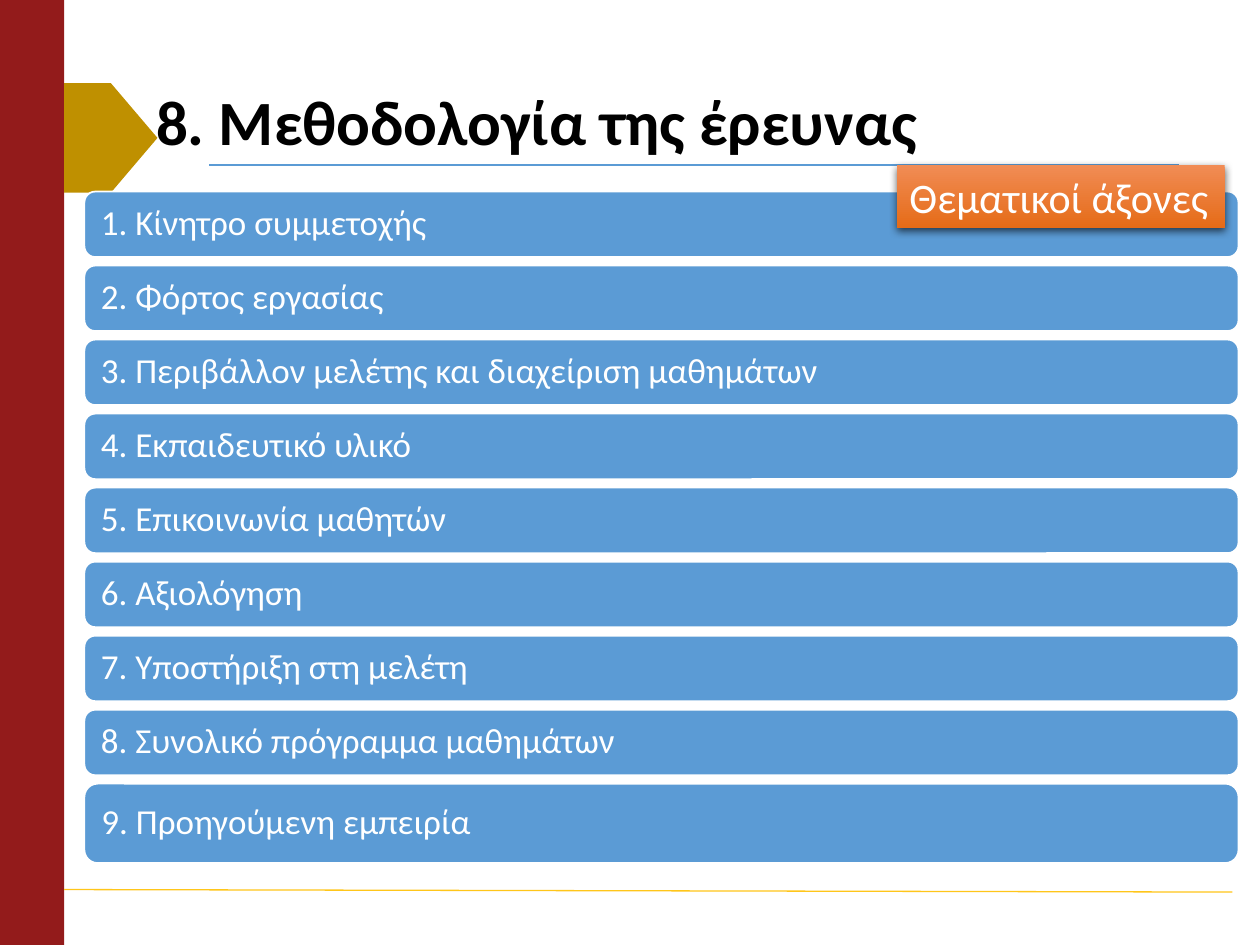
import pptx
import pptx.util
import pptx.dml.color
import pptx.enum.shapes
import pptx.enum.text
import pptx.oxml

theme = {
    "font": "Calibri",
    "title_size": 36, "axis_size": 20, "tag_size": 24,
    "black": "000000", "white": "FFFFFF", "red": "931B1B", "gold": "BF9000",
    "blue": "5B9BD5", "yellow": "FFC61A",
    "tag_top": "F18C55", "tag_bottom": "E56B17",
}
SHAPE = pptx.enum.shapes.MSO_SHAPE
rgb = pptx.dml.color.RGBColor.from_string

deck = pptx.Presentation()
deck.slide_width = pptx.util.Inches(10)
deck.slide_height = pptx.util.Inches(7.5)
col = deck.slide_width / 100
row = deck.slide_height / 75
slide = deck.slides.add_slide(deck.slide_layouts[6])


def block(kind, left, top, width, height, fill):
    box = [round(n) for n in (left * col, top * row, width * col, height * row)]
    if kind is None:
        return slide.shapes.add_textbox(*box)
    item = slide.shapes.add_shape(kind, *box)
    item.shadow.inherit = False
    item.fill.solid()
    item.fill.fore_color.rgb = rgb(fill)
    item.line.fill.background()
    return item


def write(item, words, size, color, frame_format, paragraph_format, bold=False):
    frame = item.text_frame
    frame.text = words
    paragraph = frame.paragraphs[0]
    font_format = {"name": theme["font"], "size": pptx.util.Pt(size), "bold": bold}
    paragraph_format = {"alignment": pptx.enum.text.PP_ALIGN.LEFT, **paragraph_format}
    for target, values in ((frame, frame_format), (paragraph, paragraph_format),
                           (paragraph.runs[0].font, font_format)):
        for key, value in values.items():
            setattr(target, key, value)
    paragraph.runs[0].font.color.rgb = rgb(color)


block(SHAPE.RECTANGLE, 0, 0, 5.1, 75, theme["red"])

rules = [(16.6, 13.1, 93.6, 13.1, "blue"), (5.1, 70.6, 97.8, 70.8, "yellow")]
for x1, y1, x2, y2, color in rules:
    rule = slide.shapes.add_connector(
        pptx.enum.shapes.MSO_CONNECTOR.STRAIGHT,
        round(x1 * col), round(y1 * row), round(x2 * col), round(y2 * row))
    rule.line.color.rgb = rgb(theme[color])
    rule.line.width = pptx.util.Pt(0.75)
    rule._element.spPr.append(pptx.oxml.parse_xml(
        '<a:effectLst xmlns:a="http://schemas.openxmlformats.org/drawingml/2006/main"/>'))

block(SHAPE.PENTAGON, 5.1, 6.6, 7.4, 8.7, theme["gold"])

middle = {"word_wrap": True, "vertical_anchor": pptx.enum.text.MSO_ANCHOR.MIDDLE}
tight = {"line_spacing": 0.9}
title = block(None, 11.4, 6.8, 85, 6.3, None)
write(title, "8. Μεθοδολογία της έρευνας", theme["title_size"], theme["black"],
      middle, tight, bold=True)

axes = [
    "Κίνητρο συμμετοχής",
    "Φόρτος εργασίας",
    "Περιβάλλον μελέτης και διαχείριση μαθημάτων",
    "Εκπαιδευτικό υλικό",
    "Επικοινωνία μαθητών",
    "Αξιολόγηση",
    "Υποστήριξη στη μελέτη",
    "Συνολικό πρόγραμμα μαθημάτων",
    "Προηγούμενη εμπειρία",
]
axis_frame = {**middle, "margin_left": round(1.05 * col), "margin_right": round(1.05 * col),
              "margin_top": round(row), "margin_bottom": round(row)}
for index, axis in enumerate(axes):
    height = 6.3 if index == len(axes) - 1 else 5.2
    bar = block(SHAPE.ROUNDED_RECTANGLE, 6.7, 15.2 + 5.875 * index, 91.6, height, theme["blue"])
    bar.line.color.rgb = rgb(theme["white"])
    bar.line.width = pptx.util.Pt(1)
    write(bar, f"{index + 1}. {axis}", theme["axis_size"], theme["white"], axis_frame, tight)

tag = block(SHAPE.RECTANGLE, 71.2, 13.1, 26, 5, theme["tag_bottom"])
tag.fill.gradient()
tag.fill.gradient_angle = 270
for stop, color in zip(tag.fill.gradient_stops, ("tag_top", "tag_bottom")):
    stop.color.rgb = rgb(theme[color])
tag_effects = tag._element.spPr.find(pptx.oxml.ns.qn("a:effectLst"))
tag_effects.append(pptx.oxml.parse_xml(
    '<a:outerShdw xmlns:a="http://schemas.openxmlformats.org/drawingml/2006/main"'
    ' blurRad="57150" dist="19050" dir="5400000" algn="ctr" rotWithShape="0">'
    '<a:srgbClr val="000000"><a:alpha val="63000"/></a:srgbClr></a:outerShdw>'))
write(tag, "Θεματικοί άξονες", theme["tag_size"], theme["white"],
      {"word_wrap": True, "vertical_anchor": pptx.enum.text.MSO_ANCHOR.TOP,
       "auto_size": pptx.enum.text.MSO_AUTO_SIZE.SHAPE_TO_FIT_TEXT}, {})

deck.save("out.pptx")
